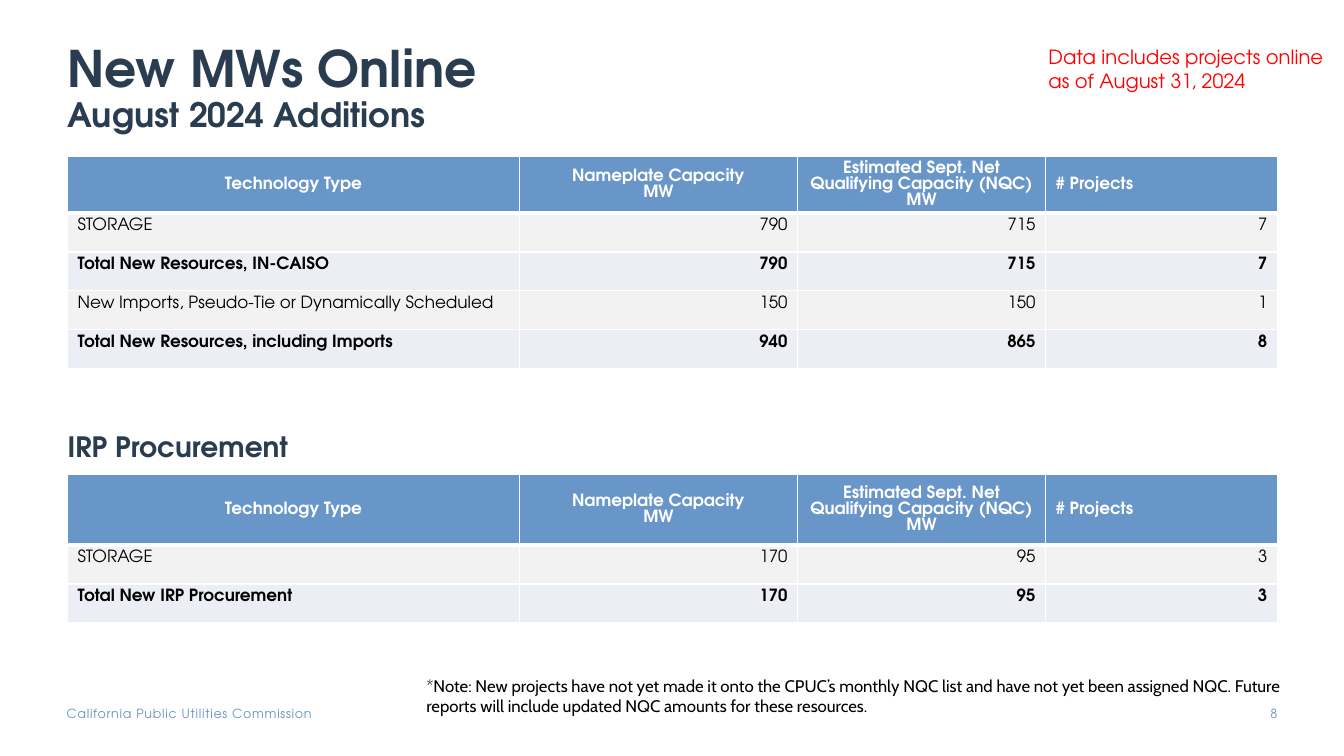
from lxml import etree
from pptx import Presentation
from pptx.dml.color import RGBColor
from pptx.enum.text import MSO_ANCHOR, MSO_AUTO_SIZE, PP_ALIGN
from pptx.oxml.ns import qn
from pptx.util import Inches, Pt

LEFT, CENTER, RIGHT = PP_ALIGN.LEFT, PP_ALIGN.CENTER, PP_ALIGN.RIGHT
TOP, MIDDLE, BOTTOM = MSO_ANCHOR.TOP, MSO_ANCHOR.MIDDLE, MSO_ANCHOR.BOTTOM

COLORS = {
    "navy": "2A3C50",
    "blue": "6996C9",
    "red": "FF0000",
    "black": "000000",
    "white": "FFFFFF",
    "detail": "F2F2F2",
    "total": "EBEFF5",
}
FONT = "TeX Gyre Adventor"
NOTE_FONT = "Cabin"

NO_INSETS = (0, 0, 0, 0)
TITLE_INSETS = (0, 0.05, 0.1, 0.05)
TEXT_INSETS = (0.1, 0.05, 0.1, 0.05)

COLUMN_WIDTHS = (4.48, 2.76, 2.46, 2.3)
BODY_ROW_HEIGHT = 0.385
HEADERS = (
    "Technology Type",
    "Nameplate Capacity\vMW",
    "Estimated Sept. Net Qualifying Capacity (NQC) MW",
    "# Projects",
)
ADDITIONS = (
    ("STORAGE", "790", "715", "7"),
    ("Total New Resources, IN-CAISO", "790", "715", "7"),
    ("New Imports, Pseudo-Tie or Dynamically Scheduled", "150", "150", "1"),
    ("Total New Resources, including Imports", "940", "865", "8"),
)
PROCUREMENT = (
    ("STORAGE", "170", "95", "3"),
    ("Total New IRP Procurement", "170", "95", "3"),
)


def rgb(name):
    return RGBColor.from_string(COLORS[name])


def write(frame, text, size, color, bold=False, align=LEFT, font=FONT, spacing=None):
    frame.text = text
    for para in frame.paragraphs:
        para.alignment = align
        if spacing:
            para.line_spacing = spacing
        for span in para.runs:
            span.font.name = font
            span.font.size = Pt(size)
            span.font.bold = bold
            span.font.color.rgb = rgb(color)


def set_frame(frame, insets, anchor):
    frame.word_wrap = True
    frame.auto_size = MSO_AUTO_SIZE.NONE
    frame.vertical_anchor = anchor
    (frame.margin_left, frame.margin_top,
     frame.margin_right, frame.margin_bottom) = map(Inches, insets)


def add_text(page, bounds, text, size, color, insets=TEXT_INSETS, anchor=TOP, **style):
    box = page.shapes.add_textbox(*map(Inches, bounds))
    set_frame(box.text_frame, insets, anchor)
    write(box.text_frame, text, size, color, **style)
    return box


def add_title(page):
    title = page.shapes.title
    title.left, title.top, title.width, title.height = map(Inches, (0.67, -0.06, 12, 1.45))
    set_frame(title.text_frame, TITLE_INSETS, BOTTOM)
    write(title.text_frame, "New MWs Online\vAugust 2024 Additions", 36, "navy",
          bold=True, spacing=0.9)
    title.text_frame.paragraphs[0].runs[1].font.size = Pt(24)


def set_border(cell, side, width):
    """Add a white border; call before the cell is filled, as borders come first."""
    line = etree.SubElement(cell._tc.get_or_add_tcPr(), qn(f"a:{side}"), w=str(Pt(width)))
    fill = etree.SubElement(line, qn("a:solidFill"))
    etree.SubElement(fill, qn("a:srgbClr"), val=COLORS["white"])


def fill_cell(cell, color):
    cell.fill.solid()
    cell.fill.fore_color.rgb = rgb(color)


def add_capacity_table(page, top, header_height, records):
    height = header_height + BODY_ROW_HEIGHT * len(records)
    frame = page.shapes.add_table(
        len(records) + 1, len(HEADERS),
        Inches(0.67), Inches(top), Inches(sum(COLUMN_WIDTHS)), Inches(height))
    table = frame.table
    table.horz_banding = False
    for column, width in zip(table.columns, COLUMN_WIDTHS):
        column.width = Inches(width)
    for row in table.rows:
        row.height = Inches(BODY_ROW_HEIGHT)
    table.rows[0].height = Inches(header_height)

    for index, label in enumerate(HEADERS):
        cell = table.cell(0, index)
        for side, width in (("lnL", 1), ("lnR", 1), ("lnT", 1), ("lnB", 3)):
            set_border(cell, side, width)
        fill_cell(cell, "blue")
        cell.vertical_anchor = MIDDLE
        align = LEFT if label == HEADERS[-1] else CENTER
        write(cell.text_frame, label, 12, "white", bold=True, align=align)

    for row_index, record in enumerate(records, start=1):
        is_total = record[0].startswith("Total")
        for index, value in enumerate(record):
            cell = table.cell(row_index, index)
            fill_cell(cell, "total" if is_total else "detail")
            write(cell.text_frame, value, 12, "black", bold=is_total,
                  align=RIGHT if index else LEFT)


def add_footer(page):
    footer = add_text(page, (0.66, 7, 3.21, 0.15), "California Public Utilities Commission",
                      9, "blue", insets=NO_INSETS)
    span = footer.text_frame.paragraphs[0].runs[0]
    span.font._element.set("spc", "50")
    add_text(page, (12.25, 7, 0.42, 0.2), "8", 9, "blue", insets=NO_INSETS, align=RIGHT)


def main():
    deck = Presentation()
    deck.slide_width, deck.slide_height = Inches(13.33), Inches(7.5)
    page = deck.slides.add_slide(deck.slide_layouts.get_by_name("Title Only"))

    add_footer(page)
    add_title(page)
    add_capacity_table(page, 1.55, 0.55, ADDITIONS)
    add_text(page, (10.3, 0.4, 4.72, 0.88),
             "Data includes projects online\vas of August 31, 2024", 14, "red")
    add_text(page, (0.67, 3.2, 12, 1.45), "IRP Procurement", 20, "navy",
             insets=TITLE_INSETS, anchor=BOTTOM, bold=True, spacing=0.9)
    add_capacity_table(page, 4.71, 0.7, PROCUREMENT)
    add_text(page, (4.13, 6.65, 8.8, 0.71),
             "*Note: New projects have not yet made it onto the CPUC’s monthly NQC list "
             "and have not yet been assigned NQC. Future reports will include updated "
             "NQC amounts for these resources.", 12, "black", font=NOTE_FONT)
    deck.save("out.pptx")


if __name__ == "__main__":
    main()
